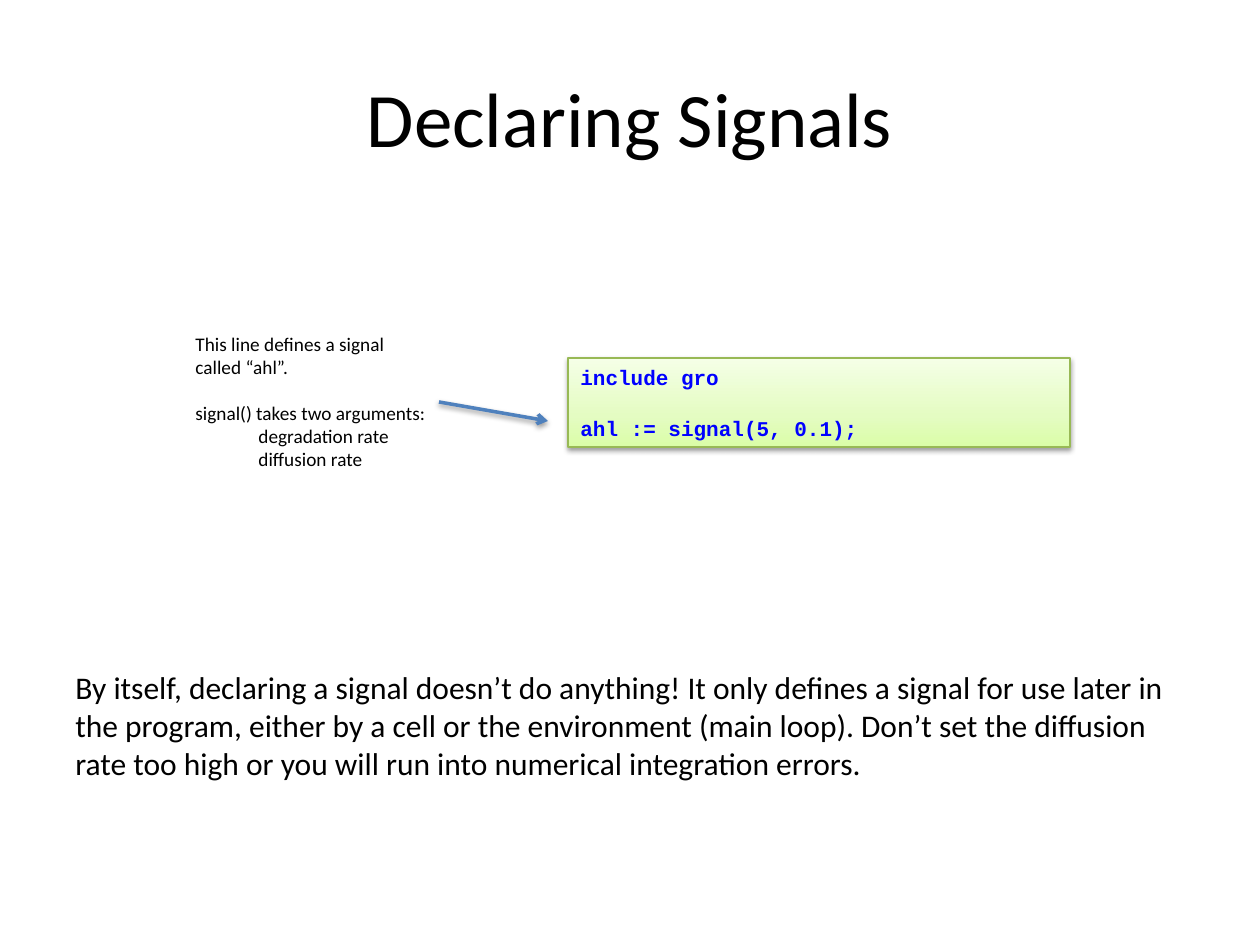
from lxml.etree import SubElement
from pptx import Presentation
from pptx.dml.color import RGBColor
from pptx.enum.shapes import MSO_CONNECTOR, MSO_SHAPE
from pptx.enum.text import MSO_ANCHOR, PP_ALIGN
from pptx.oxml import parse_xml
from pptx.oxml.ns import nsdecls, qn
from pptx.util import Emu, Pt

EMU_PER_PX = 914400 / 126


def px(length):
    return Emu(round(length * EMU_PER_PX))


def color(value):
    return RGBColor.from_string(value)


class SignalSlide:
    body_font = "Calibri"
    code_font = "Courier New"
    ink = "000000"
    code_ink = "0000FF"
    code_border = "98B955"
    code_gradient = [(0, "DAFDA7"), (35, "E4FCC2"), (100, "F5FFE7")]
    arrow_color = "4F81BD"

    def __init__(self, slide):
        self.slide = slide

    def add_lines(self, frame, lines, size, font, ink, bold=False,
                  align=PP_ALIGN.LEFT, anchor=MSO_ANCHOR.TOP):
        frame.word_wrap = True
        frame.vertical_anchor = anchor
        for index, (words, gap) in enumerate(lines):
            paragraph = frame.add_paragraph() if index else frame.paragraphs[0]
            paragraph.alignment = align
            paragraph.space_before = Pt(gap)
            run = paragraph.add_run()
            run.text = words
            run.font.name = font
            run.font.size = Pt(size)
            run.font.bold = bold
            run.font.color.rgb = color(ink)

    def text(self, left, top, width, height, lines, size, **layout):
        box = self.slide.shapes.add_textbox(px(left), px(top), px(width), px(height))
        self.add_lines(box.text_frame, lines, size, self.body_font, self.ink, **layout)
        return box

    def code(self, left, top, width, height, lines, size):
        panel = self.slide.shapes.add_shape(
            MSO_SHAPE.RECTANGLE, px(left), px(top), px(width), px(height))
        panel.line.color.rgb = color(self.code_border)
        panel.line.width = Pt(0.75)
        panel.fill.gradient()
        panel.fill.gradient_angle = 90
        stops = panel._element.spPr.find(qn("a:gradFill")).find(qn("a:gsLst"))
        stops.clear()
        for position, shade in self.code_gradient:
            stop = SubElement(stops, qn("a:gs"), pos=str(position * 1000))
            SubElement(stop, qn("a:srgbClr"), val=shade)
        self.shadow(panel)
        self.add_lines(panel.text_frame, lines, size, self.code_font, self.code_ink, bold=True)

    def arrow(self, source, side, tip_x, tip_y):
        pointer = self.slide.shapes.add_connector(
            MSO_CONNECTOR.STRAIGHT, 0, 0, px(tip_x), px(tip_y))
        pointer.begin_connect(source, side)
        pointer.line.color.rgb = color(self.arrow_color)
        pointer.line.width = Pt(2)
        SubElement(pointer.line._get_or_add_ln(), qn("a:tailEnd"), type="arrow")
        self.shadow(pointer)

    def shadow(self, shape):
        shape._element.spPr.append(parse_xml(
            f'<a:effectLst {nsdecls("a")}>'
            f'<a:outerShdw blurRad="{Pt(3.1)}" dist="{Pt(1.6)}" dir="5400000" rotWithShape="0">'
            '<a:srgbClr val="000000"><a:alpha val="38000"/></a:srgbClr>'
            '</a:outerShdw></a:effectLst>'))


def main():
    deck = Presentation()
    deck.slide_width, deck.slide_height = px(1260), px(945)
    page = SignalSlide(deck.slides.add_slide(deck.slide_layouts[6]))

    page.text(63, 38, 1134, 157, [("Declaring Signals", 0)], 44,
              align=PP_ALIGN.CENTER, anchor=MSO_ANCHOR.MIDDLE)
    page.code(568, 358, 502, 89,
              [("include gro", 0), ("ahl := signal(5, 0.1);", 15)], 12)
    explanation = page.text(183, 326, 256, 152, [
        ("This line defines a signal called “ahl”.", 0),
        ("signal() takes two arguments: \tdegradation rate", 13),
        ("\tdiffusion rate", 0),
    ], 11)
    page.arrow(explanation, 3, 548, 421)
    page.text(63, 662, 1134, 127, [(
        "By itself, declaring a signal doesn’t do anything! It only defines a signal "
        "for use later in the program, either by a cell or the environment (main loop). "
        "Don’t set the diffusion rate too high or you will run into numerical "
        "integration errors.", 0)], 18)

    deck.save("out.pptx")


if __name__ == "__main__":
    main()
